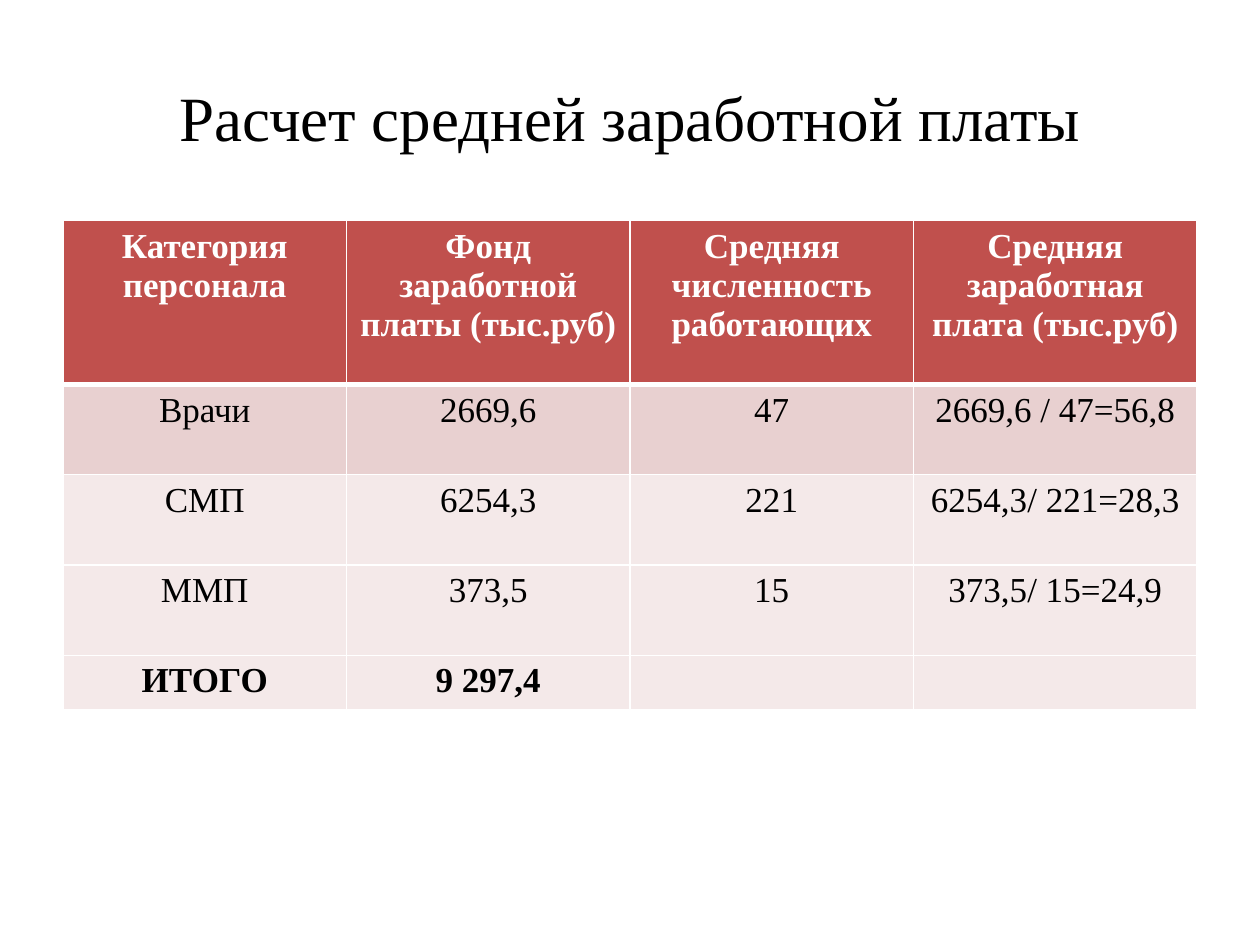
from dataclasses import dataclass

from lxml import etree
from pptx import Presentation
from pptx.dml.color import RGBColor
from pptx.enum.text import MSO_ANCHOR, PP_ALIGN
from pptx.oxml.ns import qn
from pptx.util import Cm, Pt

CENTER = PP_ALIGN.CENTER
MIDDLE = MSO_ANCHOR.MIDDLE
BLANK_LAYOUT = 6


@dataclass(frozen=True)
class Theme:
    font: str = "Times New Roman"
    title_size: int = 36
    table_size: int = 20
    ink: str = "000000"
    header_ink: str = "FFFFFF"
    header_fill: str = "C0504D"
    first_fill: str = "E8D0D0"
    body_fill: str = "F4E9E9"
    border: str = "FFFFFF"
    thin: int = 1
    thick: int = 3


HEADINGS = (
    "Категория персонала",
    "Фонд заработной платы (тыс.руб)",
    "Средняя численность работающих",
    "Средняя заработная плата (тыс.руб)",
)
STAFF = (
    ("Врачи", "2669,6", "47", "2669,6 / 47=56,8"),
    ("СМП", "6254,3", "221", "6254,3/ 221=28,3"),
    ("ММП", "373,5", "15", "373,5/ 15=24,9"),
)
TOTAL = ("ИТОГО", "9 297,4", "", "")

MARGIN = 1.27
CONTENT_WIDTH = 22.86
HEADER_HEIGHT, STAFF_HEIGHT, TOTAL_HEIGHT = 3.3, 1.82, 1.04


class SlideBuilder:
    def __init__(self, slide, theme):
        self.slide = slide
        self.theme = theme

    def add_text(self, frame, text, size, color, bold=False):
        paragraph = frame.paragraphs[0]
        paragraph.alignment = CENTER
        run = paragraph.add_run()
        run.text = text
        run.font.name = self.theme.font
        run.font.size = Pt(size)
        run.font.bold = bold
        run.font.color.rgb = RGBColor.from_string(color)

    def title(self, text, top, height):
        box = self.slide.shapes.add_textbox(
            Cm(MARGIN), Cm(top), Cm(CONTENT_WIDTH), Cm(height))
        frame = box.text_frame
        frame.word_wrap = True
        frame.vertical_anchor = MIDDLE
        self.add_text(frame, text, self.theme.title_size, self.theme.ink)

    def borders(self, cell, top, bottom):
        """Draw all four cell edges; widths are in points."""
        properties = cell._tc.get_or_add_tcPr()
        thin = self.theme.thin
        for edge, width in (("lnL", thin), ("lnR", thin),
                            ("lnT", top), ("lnB", bottom)):
            line = etree.SubElement(properties, qn(f"a:{edge}"), w=str(Pt(width)))
            fill = etree.SubElement(line, qn("a:solidFill"))
            etree.SubElement(fill, qn("a:srgbClr"), val=self.theme.border)

    def table(self, rows, heights, top):
        """Fill a table whose first row is the header and last row the total."""
        theme = self.theme
        columns = len(rows[0])
        table = self.slide.shapes.add_table(
            len(rows), columns, Cm(MARGIN), Cm(top),
            Cm(CONTENT_WIDTH), Cm(sum(heights))).table
        table.horz_banding = False
        for column in table.columns:
            column.width = Cm(CONTENT_WIDTH / columns)

        fills = {0: theme.header_fill, 1: theme.first_fill}
        for index, (values, height) in enumerate(zip(rows, heights)):
            table.rows[index].height = Cm(height)
            is_header = index == 0
            ink = theme.header_ink if is_header else theme.ink
            bold = is_header or index == len(rows) - 1
            above = theme.thick if index == 1 else theme.thin
            below = theme.thick if is_header else theme.thin
            for cell, value in zip(table.rows[index].cells, values):
                self.borders(cell, above, below)
                cell.fill.solid()
                cell.fill.fore_color.rgb = RGBColor.from_string(
                    fills.get(index, theme.body_fill))
                if value:
                    self.add_text(cell.text_frame, value, theme.table_size, ink, bold)


def main():
    deck = Presentation()
    deck.slide_width, deck.slide_height = Cm(25.4), Cm(19.05)
    slide = deck.slides.add_slide(deck.slide_layouts[BLANK_LAYOUT])
    builder = SlideBuilder(slide, Theme())
    builder.title("Расчет средней заработной платы", top=0.76, height=3.18)
    builder.table(
        (HEADINGS, *STAFF, TOTAL),
        (HEADER_HEIGHT, *[STAFF_HEIGHT] * len(STAFF), TOTAL_HEIGHT),
        top=4.45)
    deck.save("out.pptx")


if __name__ == "__main__":
    main()
